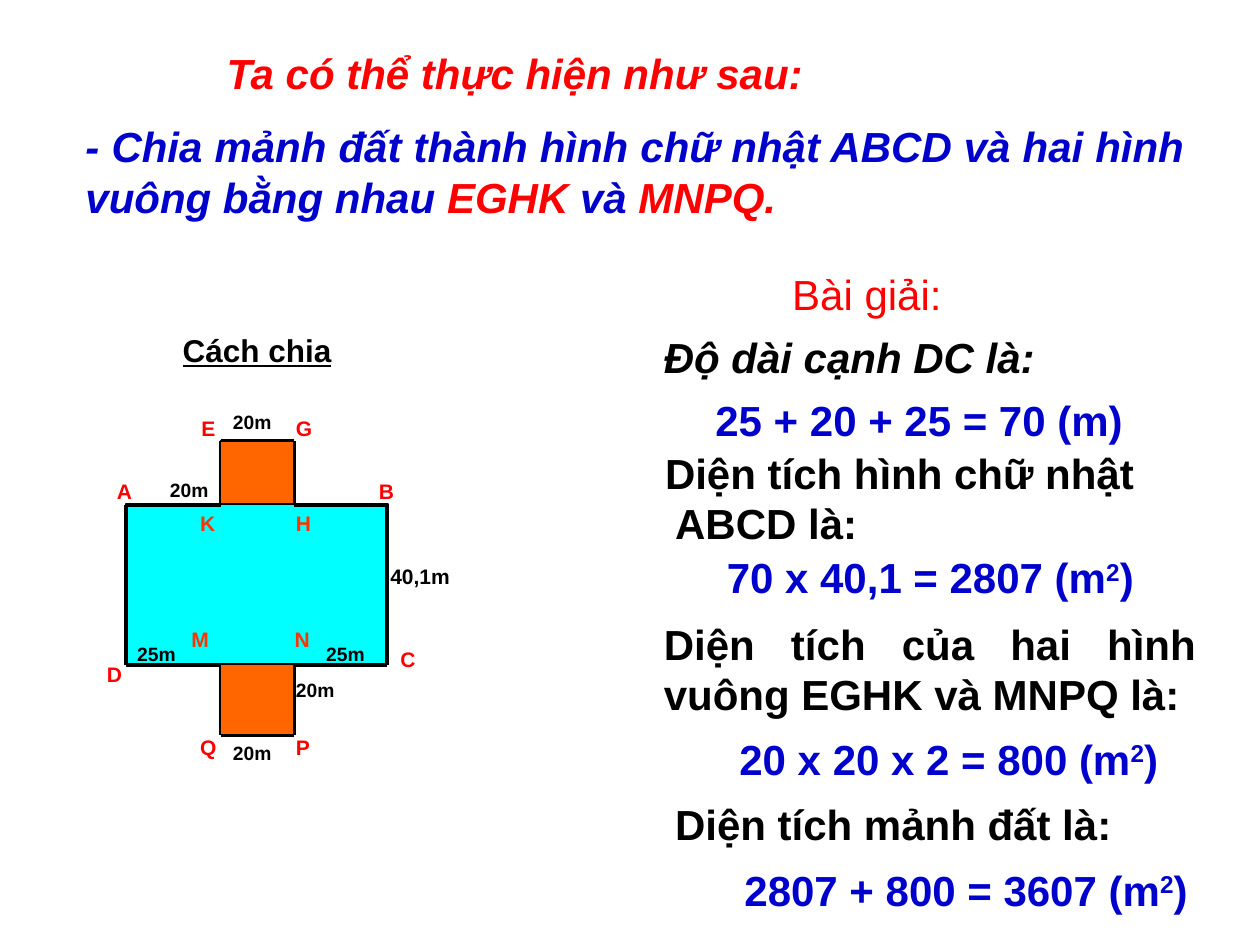
from pptx import Presentation
from pptx.dml.color import RGBColor
from pptx.enum.shapes import MSO_CONNECTOR, MSO_SHAPE
from pptx.enum.text import MSO_AUTO_SIZE, PP_ALIGN
from pptx.oxml.ns import qn
from pptx.util import Inches, Pt
from lxml import etree

RECTANGLE = MSO_SHAPE.RECTANGLE
STRAIGHT = MSO_CONNECTOR.STRAIGHT
GROW = MSO_AUTO_SIZE.SHAPE_TO_FIT_TEXT
LEFT, CENTER, JUSTIFY = PP_ALIGN.LEFT, PP_ALIGN.CENTER, PP_ALIGN.JUSTIFY

BLACK = RGBColor(0x00, 0x00, 0x00)
RED = RGBColor(0xFF, 0x00, 0x00)
VERMILION = RGBColor(0xFF, 0x33, 0x00)
BLUE = RGBColor(0x00, 0x00, 0xCC)
CYAN = RGBColor(0x00, 0xFF, 0xFF)
ORANGE = RGBColor(0xFF, 0x66, 0x00)


class Board:
    font_name = "Arial"

    def __init__(self, slide):
        self.slide = slide

    def rectangle(self, area, color):
        shape = self.slide.shapes.add_shape(RECTANGLE, *map(Inches, area))
        shape.shadow.inherit = False
        shape.fill.solid()
        shape.fill.fore_color.rgb = color
        shape.line.color.rgb = BLACK
        shape.line.width = Pt(0.75)

    def edge(self, start, end):
        line = self.slide.shapes.add_connector(STRAIGHT, *map(Inches, start + end))
        line.line.color.rgb = BLACK
        line.line.width = Pt(2.25)
        etree.SubElement(line._element.spPr, qn("a:effectLst"))

    def text_box(self, area):
        box = self.slide.shapes.add_textbox(*map(Inches, area))
        box.text_frame.word_wrap = True
        box.text_frame.auto_size = GROW
        return box

    def fill_para(self, para, spans, align=LEFT, margin=0, indent=0, **formats):
        para.alignment = align
        properties = para._p.get_or_add_pPr()
        properties.set("marL", str(Inches(margin)))
        properties.set("indent", str(Inches(indent)))
        for text, color, raised in spans:
            span = para.add_run()
            span.text = text
            values = {"name": self.font_name, "size": Pt(24), "bold": True}
            for key, value in (values | formats).items():
                setattr(span.font, key, value)
            span.font.color.rgb = color
            if raised:
                span._r.get_or_add_rPr().set("baseline", "30000")

    def text(self, area, text, color=BLACK, **formats):
        box = self.text_box(area)
        self.fill_para(box.text_frame.paragraphs[0], [(text, color, False)], **formats)
        return box

    def label(self, area, text, color, size):
        box = self.text(area, text, color, size=Pt(size))
        box.text_frame.margin_right = 0

    def area_result(self, area, text):
        box = self.text_box(area)
        spans = [(text + " (m", BLUE, False), ("2", BLUE, True), (")", BLUE, False)]
        self.fill_para(box.text_frame.paragraphs[0], spans)


def draw_plot(board):
    left, inner_left, inner_right, right = 1, 1.75, 2.33, 3.07
    top, upper, lower, bottom = 3.5, 4.01, 5.28, 5.83
    board.rectangle((left, 4, 2.08, 1.27), CYAN)
    outline = [
        (inner_left, top), (inner_right, top), (inner_right, upper),
        (right, upper), (right, lower), (inner_right, lower),
        (inner_right, bottom), (inner_left, bottom), (inner_left, lower),
        (left, lower), (left, upper), (inner_left, upper),
    ]
    for start, end in zip(outline, outline[1:] + outline[:1]):
        board.edge(start, end)

    lengths = [
        ("20m", 1.25, 3.75), ("25m", 2.49, 5.05), ("20m", 1.75, 5.83),
        ("25m", 0.99, 5.05), ("20m", 1.75, 3.21), ("20m", 2.25, 5.33),
    ]
    for text, x, y in lengths:
        board.label((x, y, 0.51, 0.29), text, BLACK, 11)
    board.label((3, 4.42, 0.83, 0.3), "40,1m", BLACK, 12)

    outer_corners = [
        ("A", 0.83, 3.75), ("E", 1.5, 3.25), ("G", 2.25, 3.25), ("B", 2.91, 3.75),
        ("C", 3.08, 5.08), ("P", 2.25, 5.78), ("Q", 1.49, 5.78), ("D", 0.75, 5.2),
    ]
    inner_corners = [("K", 1.49, 4), ("H", 2.25, 4), ("N", 2.24, 4.92), ("M", 1.42, 4.92)]
    for corners, color in ((outer_corners, RED), (inner_corners, VERMILION)):
        for text, x, y in corners:
            board.label((x, y, 0.26, 0.3), text, color, 12)

    for y, height in ((top, 0.5), (5.27, 0.56)):
        board.rectangle((inner_left, y, 0.58, height), ORANGE)
    board.text((1.08, 2.58, 1.92, 0.4), "Cách chia", align=CENTER,
               size=Pt(18), underline=True)


def add_method(board):
    frame = board.text((0.58, 0.33, 8.92, 1.51), "Ta có thể thực hiện như sau:", RED,
                       align=JUSTIFY, indent=1.12, italic=True).text_frame
    para = frame.add_paragraph()
    para.space_before = Pt(13)
    spans = [
        ("- Chia mảnh đất thành hình chữ nhật ABCD và hai hình vuông bằng nhau ", BLUE, False),
        ("EGHK", RED, False), (" và ", BLUE, False), ("MNPQ.", RED, False),
    ]
    board.fill_para(para, spans, align=JUSTIFY, italic=True)


def add_solution(board):
    board.text((5.92, 2.08, 1.92, 0.51), "Bài giải:", RED, align=CENTER, bold=False)
    board.text((5.17, 2.58, 3.67, 0.51), "Độ dài cạnh DC là:", italic=True)
    board.text((5.58, 3.08, 3.5, 0.51), "25 + 20 + 25 = 70 (m)", BLUE)
    board.text((5.18, 3.5, 4.17, 0.91), "Diện tích hình chữ nhật ABCD là:",
               margin=0.08, indent=-0.08)
    board.area_result((5.67, 4.33, 3.83, 0.51), "70 x 40,1 = 2807")
    board.text((5.17, 4.86, 4.42, 0.91), "Diện tích của hai hình vuông EGHK và MNPQ là:",
               align=JUSTIFY)
    board.area_result((5.77, 5.77, 3.58, 0.51), "20 x 20 x 2 = 800")
    board.text((5.26, 6.29, 4.17, 0.51), "Diện tích mảnh đất là:")
    board.area_result((5.81, 6.81, 3.92, 0.51), "2807 + 800 = 3607")


def main():
    deck = Presentation()
    deck.slide_width, deck.slide_height = Inches(10), Inches(7.5)
    board = Board(deck.slides.add_slide(deck.slide_layouts[6]))
    draw_plot(board)
    add_method(board)
    add_solution(board)
    deck.save("out.pptx")


if __name__ == "__main__":
    main()
